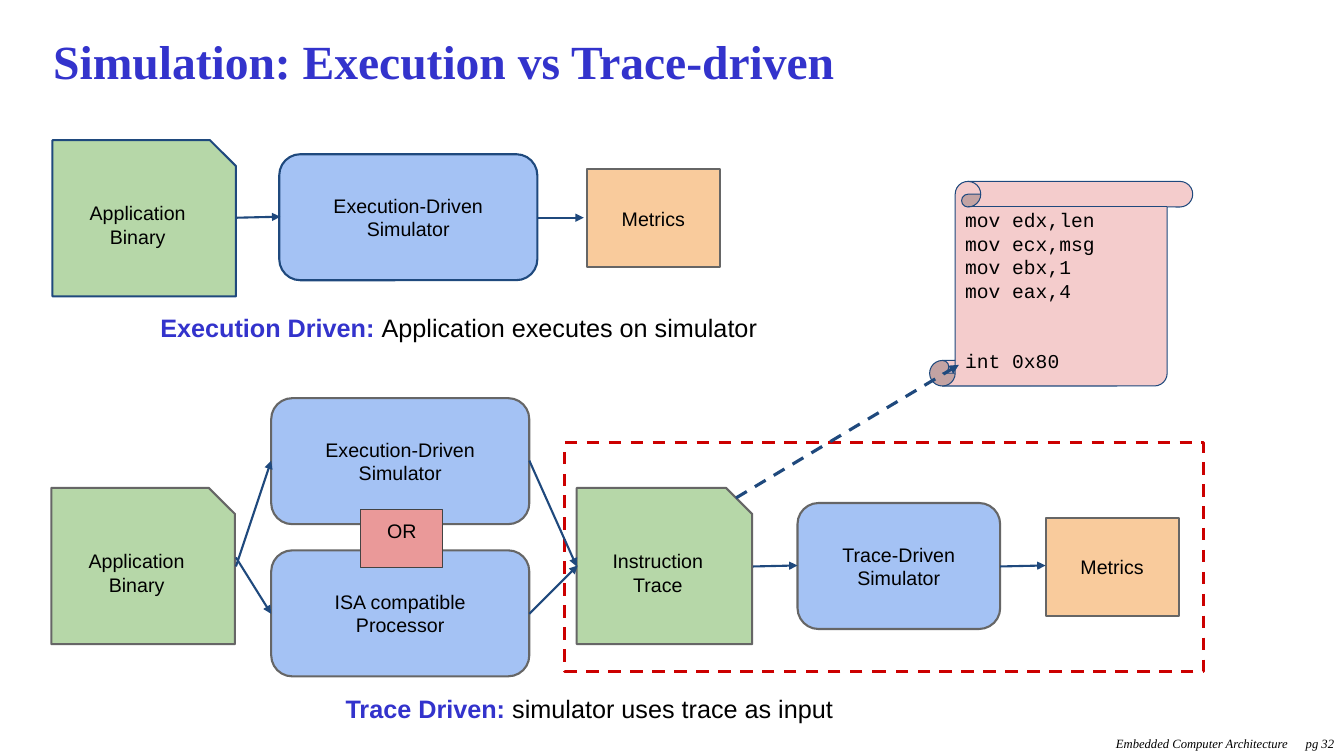
from dataclasses import dataclass
from typing import Any, NamedTuple, Optional

from pptx import Presentation
from pptx import util as u
from pptx.dml import color
from pptx.enum import dml, shapes, text
from pptx.oxml import ns, xmlchemy

PX = 9144
COLORS = {
    "ink": "000000", "title": "3333CC", "navy": "1F497D", "gray": "666666",
    "dark": "434343", "green": "B6D7A8", "blue": "A4C2F4", "orange": "F9CB9C",
    "pink": "F4CCCC", "rose": "EA9999", "red": "CC0000",
}
SNIP = shapes.MSO_SHAPE.SNIP_1_RECTANGLE
ROUND = shapes.MSO_SHAPE.ROUNDED_RECTANGLE
RECT = shapes.MSO_SHAPE.RECTANGLE
SCROLL = shapes.MSO_SHAPE.VERTICAL_SCROLL
LEFT, CENTER, RIGHT = text.PP_ALIGN.LEFT, text.PP_ALIGN.CENTER, text.PP_ALIGN.RIGHT
TOP, MIDDLE = text.MSO_ANCHOR.TOP, text.MSO_ANCHOR.MIDDLE

BODY = {"name": "Arial", "size": u.Pt(14)}
CODE = {"name": "Courier New", "size": u.Pt(14)}
CAPTION = {"name": "Arial", "size": u.Pt(18)}
TITLE = {"name": "Times New Roman", "size": u.Pt(34), "bold": True}
FOOTER = {"name": "Times New Roman", "size": u.Pt(9), "italic": True}


class Box(NamedTuple):
    left: int
    top: int
    width: int
    height: int

    def emu(self) -> list[int]:
        return [side * PX for side in self]


class Piece(NamedTuple):
    words: str
    font: dict[str, Any]
    color: str = "ink"


@dataclass
class Node:
    kind: Any
    box: Box
    lines: tuple[str, ...]
    fill: Optional[str]
    border: str = "gray"
    weight: float = 1.5
    dashed: bool = False
    font: Any = None
    align: Any = CENTER
    anchor: Any = MIDDLE


@dataclass
class Arrow:
    start: tuple[int, int]
    end: tuple[int, int]
    weight: float = 1.5
    dashed: bool = False


@dataclass
class Label:
    box: Box
    pieces: list[Piece]
    align: Any
    anchor: Any = TOP
    side: int = 10
    edge: int = 5
    spacing: float = 1.0


def apply(target: Any, values: dict[str, Any]) -> None:
    for key, value in values.items():
        setattr(target, key, value)


def rgb(name: str) -> color.RGBColor:
    return color.RGBColor.from_string(COLORS[name])


def set_frame(frame: Any, anchor: Any, side: int, edge: int) -> None:
    apply(frame, {
        "word_wrap": True, "vertical_anchor": anchor,
        "margin_left": side * PX, "margin_right": side * PX,
        "margin_top": edge * PX, "margin_bottom": edge * PX,
    })


def write(paragraph: Any, pieces: list[Piece], align: Any) -> None:
    paragraph.alignment = align
    for piece in pieces:
        run = paragraph.add_run()
        run.text = piece.words
        apply(run.font, piece.font)
        run.font.color.rgb = rgb(piece.color)


def set_line(line: Any, name: str, weight: float, dashed: bool) -> None:
    line.color.rgb = rgb(name)
    line.width = u.Pt(weight)
    if dashed:
        line.dash_style = dml.MSO_LINE.DASH


def draw_node(slide: Any, node: Node) -> Any:
    shape = slide.shapes.add_shape(node.kind, *node.box.emu())
    shape.shadow.inherit = False
    if node.fill:
        shape.fill.solid()
        shape.fill.fore_color.rgb = rgb(node.fill)
    else:
        shape.fill.background()
    set_line(shape.line, node.border, node.weight, node.dashed)
    frame = shape.text_frame
    set_frame(frame, node.anchor, 10, 10)
    for index, words in enumerate(node.lines):
        paragraph = frame.add_paragraph() if index else frame.paragraphs[0]
        write(paragraph, [Piece(words, node.font or BODY)], node.align)
    return shape


def draw_arrow(slide: Any, arrow: Arrow) -> None:
    ends = [value * PX for value in arrow.start + arrow.end]
    connector = slide.shapes.add_connector(shapes.MSO_CONNECTOR.STRAIGHT, *ends)
    set_line(connector.line, "navy", arrow.weight, arrow.dashed)
    head = xmlchemy.OxmlElement("a:tailEnd")
    head.set("type", "triangle")
    properties = connector.line._get_or_add_ln()
    properties.append(head)
    properties.getparent().append(
        properties.makeelement(ns.qn("a:effectLst"), {}))


def draw_label(slide: Any, label: Label) -> None:
    frame = slide.shapes.add_textbox(*label.box.emu()).text_frame
    set_frame(frame, label.anchor, label.side, label.edge)
    paragraph = frame.paragraphs[0]
    paragraph.line_spacing = label.spacing
    write(paragraph, label.pieces, label.align)


def caption(box: Box, lead: str, rest: str) -> Label:
    pieces = [Piece(lead, {**CAPTION, "bold": True}, "title"), Piece(rest, CAPTION)]
    return Label(box, pieces, CENTER, edge=10)


LABELS = [
    Label(Box(43, 25, 1246, 80),
          [Piece("Simulation: Execution vs Trace-driven", TITLE, "title")],
          LEFT, MIDDLE, spacing=0.8),
    Label(Box(950, 725, 337, 25),
          [Piece("Embedded Computer Architecture", FOOTER)], RIGHT),
    Label(Box(1260, 725, 73, 25), [Piece("pg 32", FOOTER)], RIGHT),
    caption(Box(42, 300, 826, 69), "Execution Driven: ",
            "Application executes on simulator"),
    caption(Box(51, 678, 1067, 69), "Trace Driven: ",
            "simulator uses trace as input"),
]
BINARY = ("Application Binary",)
EXECUTION = ("Execution-Driven", "Simulator")
NODES = [
    Node(SNIP, Box(52, 139, 182, 155), BINARY, "green", "navy"),
    Node(ROUND, Box(277, 153, 256, 125), EXECUTION, "blue", "navy"),
    Node(RECT, Box(582, 168, 132, 97), ("Metrics",), "orange"),
    Node(SNIP, Box(51, 484, 182, 155), BINARY, "green"),
    Node(ROUND, Box(269, 395, 256, 125), EXECUTION, "blue"),
    Node(ROUND, Box(269, 546, 256, 125), ("ISA compatible", "Processor"), "blue"),
    Node(SNIP, Box(572, 484, 174, 155), ("Instruction", "Trace"), "green"),
    Node(ROUND, Box(791, 499, 201, 125), ("Trace-Driven", "Simulator"), "blue"),
    Node(RECT, Box(1037, 514, 132, 97), ("Metrics",), "orange"),
    Node(RECT, Box(560, 439, 634, 227), (), None, "red", 2.25, True),
    Node(RECT, Box(358, 505, 81, 58), ("OR",), "rose", "dark", 0.75, anchor=TOP),
]
LISTING = Node(SCROLL, Box(922, 180, 261, 203),
               ("mov edx,len", "mov ecx,msg", "mov ebx,1", "mov eax,4", "int 0x80"),
               "pink", "navy", 0.75, font=CODE, align=LEFT)
ARROWS = [
    Arrow((235, 216), (278, 215)),
    Arrow((533, 216), (579, 216)),
    Arrow((730, 494), (951, 362), 2.25, True),
    Arrow((234, 562), (269, 457)),
    Arrow((234, 553), (269, 609)),
    Arrow((525, 457), (572, 562)),
    Arrow((525, 609), (573, 561)),
    Arrow((747, 562), (791, 561)),
    Arrow((992, 562), (1037, 561)),
]


def main() -> None:
    deck = Presentation()
    apply(deck, {"slide_width": 1333 * PX, "slide_height": 750 * PX})
    slide = deck.slides.add_slide(deck.slide_layouts[6])
    for label in LABELS:
        draw_label(slide, label)
    for node in NODES:
        draw_node(slide, node)
    scroll = draw_node(slide, LISTING)
    scroll.text_frame.paragraphs[-1].space_before = u.Pt(33)
    for arrow in ARROWS:
        draw_arrow(slide, arrow)
    deck.save("out.pptx")


if __name__ == "__main__":
    main()
